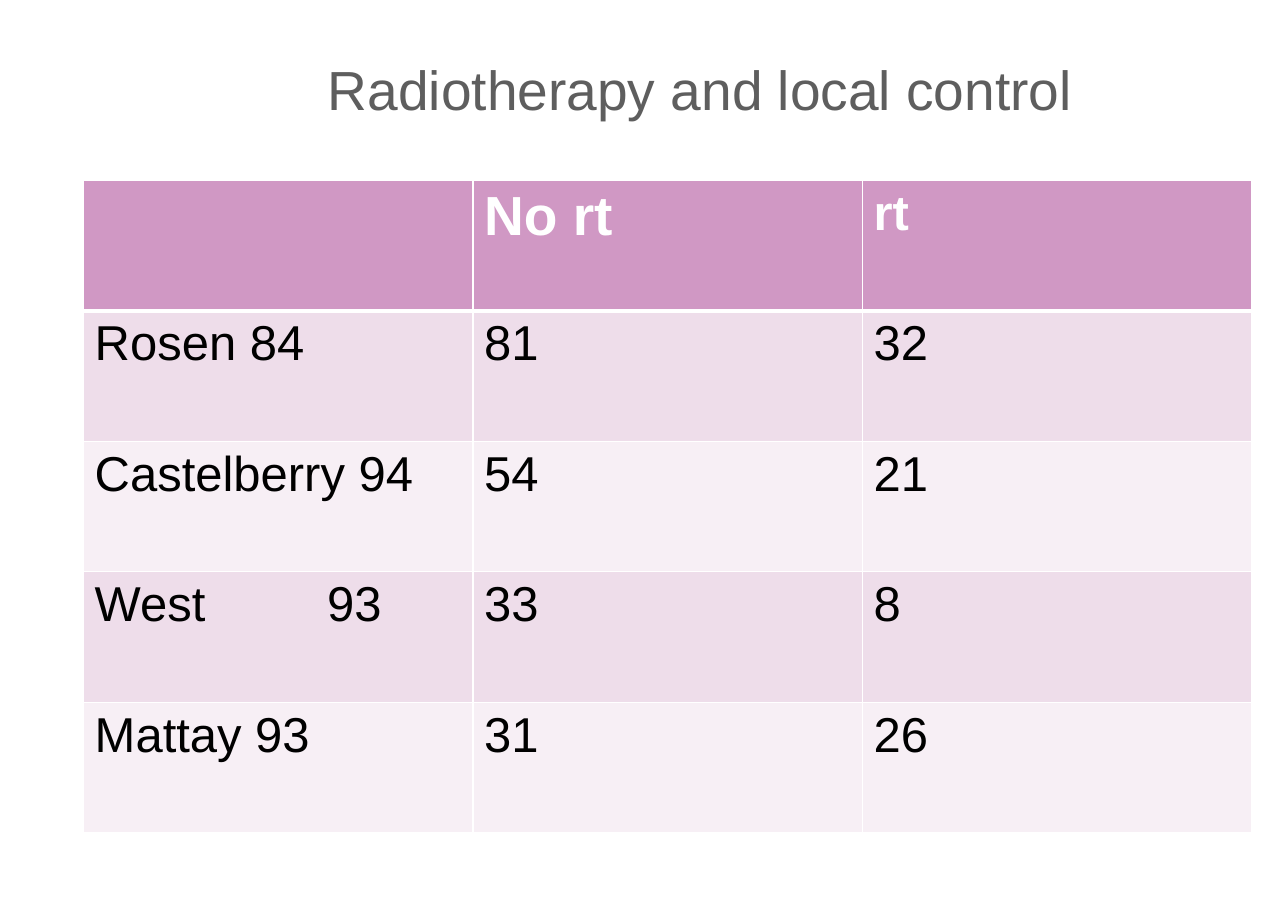
from dataclasses import dataclass

from lxml.etree import SubElement
from pptx import Presentation
from pptx.dml.color import RGBColor
from pptx.enum.text import MSO_ANCHOR as Anchor, PP_ALIGN as Align
from pptx.oxml.ns import qn
from pptx.util import Emu, Inches, Pt

SLIDE_W, SLIDE_H = Inches(11.69), Inches(8.27)
FONT = "Arial"
COLOURS = {
    "title": "5E5E5E",
    "header": "D098C4",
    "odd_row": "EEDDEA",
    "even_row": "F7EFF5",
    "border": "FFFFFF",
    "header_text": "FFFFFF",
    "body_text": "000000",
}
YEAR_TAB = Inches(2.11)


@dataclass(frozen=True)
class Area:
    """A place on the slide, in percent of its width and height."""
    left: float
    top: float
    width: float
    height: float

    def box(self) -> tuple[Emu, Emu, Emu, Emu]:
        return (Emu(int(SLIDE_W * self.left / 100)), Emu(int(SLIDE_H * self.top / 100)),
                Emu(int(SLIDE_W * self.width / 100)), Emu(int(SLIDE_H * self.height / 100)))


@dataclass(frozen=True)
class Study:
    name: str
    no_rt: str
    rt: str


TITLE_AREA = Area(11.6, 0.2, 85.5, 19.1)
TABLE_AREA = Area(6.5, 19.8, 90.7, 71.6)
ROWS = [
    Study("", "No rt", "rt"),
    Study("Rosen 84", "81", "32"),
    Study("Castelberry 94", "54", "21"),
    Study("West\t93", "33", "8"),
    Study("Mattay 93", "31", "26"),
]


def style_text(paragraph, size: int, colour: str, bold: bool = False) -> None:
    for run in paragraph.runs:
        run.font.name = FONT
        run.font.size = Pt(size)
        run.font.bold = bold
        run.font.color.rgb = RGBColor.from_string(COLOURS[colour])


def add_borders(cell, top: int, bottom: int) -> None:
    properties = cell._tc.get_or_add_tcPr()
    for side, width in {"L": 1, "R": 1, "T": top, "B": bottom}.items():
        line = SubElement(properties, qn(f"a:ln{side}"), w=str(Pt(width)))
        fill = SubElement(line, qn("a:solidFill"))
        SubElement(fill, qn("a:srgbClr"), val=COLOURS["border"])


def add_year_tab(paragraph) -> None:
    tabs = SubElement(paragraph._p.get_or_add_pPr(), qn("a:tabLst"))
    SubElement(tabs, qn("a:tab"), pos=str(YEAR_TAB), algn="l")


def fill_cell(cell, text: str, row: int, size: int) -> None:
    is_header = row == 0
    add_borders(cell, top=3 if row == 1 else 1, bottom=3 if is_header else 1)
    band = "header" if is_header else "odd_row" if row % 2 else "even_row"
    cell.fill.solid()
    cell.fill.fore_color.rgb = RGBColor.from_string(COLOURS[band])
    paragraph = cell.text_frame.paragraphs[0]
    if "\t" in text:
        add_year_tab(paragraph)
    paragraph.text = text
    style_text(paragraph, size, "header_text" if is_header else "body_text", is_header)


def add_title(slide, text: str) -> None:
    frame = slide.shapes.add_textbox(*TITLE_AREA.box()).text_frame
    frame.word_wrap = True
    frame.vertical_anchor = Anchor.MIDDLE
    frame.margin_left = frame.margin_right = Inches(0.11)
    frame.margin_top = frame.margin_bottom = Inches(0.06)
    frame.text = text
    frame.paragraphs[0].alignment = Align.CENTER
    style_text(frame.paragraphs[0], 36, "title")


def add_control_table(slide) -> None:
    control = slide.shapes.add_table(len(ROWS), 3, *TABLE_AREA.box()).table
    control.first_row = control.horz_banding = False
    for row, study in enumerate(ROWS):
        for column, text in enumerate((study.name, study.no_rt, study.rt)):
            size = 36 if (row, column) == (0, 1) else 32
            fill_cell(control.cell(row, column), text, row, size)


def main() -> None:
    deck = Presentation()
    deck.slide_width, deck.slide_height = SLIDE_W, SLIDE_H
    slide = deck.slides.add_slide(deck.slide_layouts[6])

    # Heading
    add_title(slide, "Radiotherapy and local control")

    # Local control by study, without and with radiotherapy
    add_control_table(slide)

    deck.save("out.pptx")


if __name__ == "__main__":
    main()
